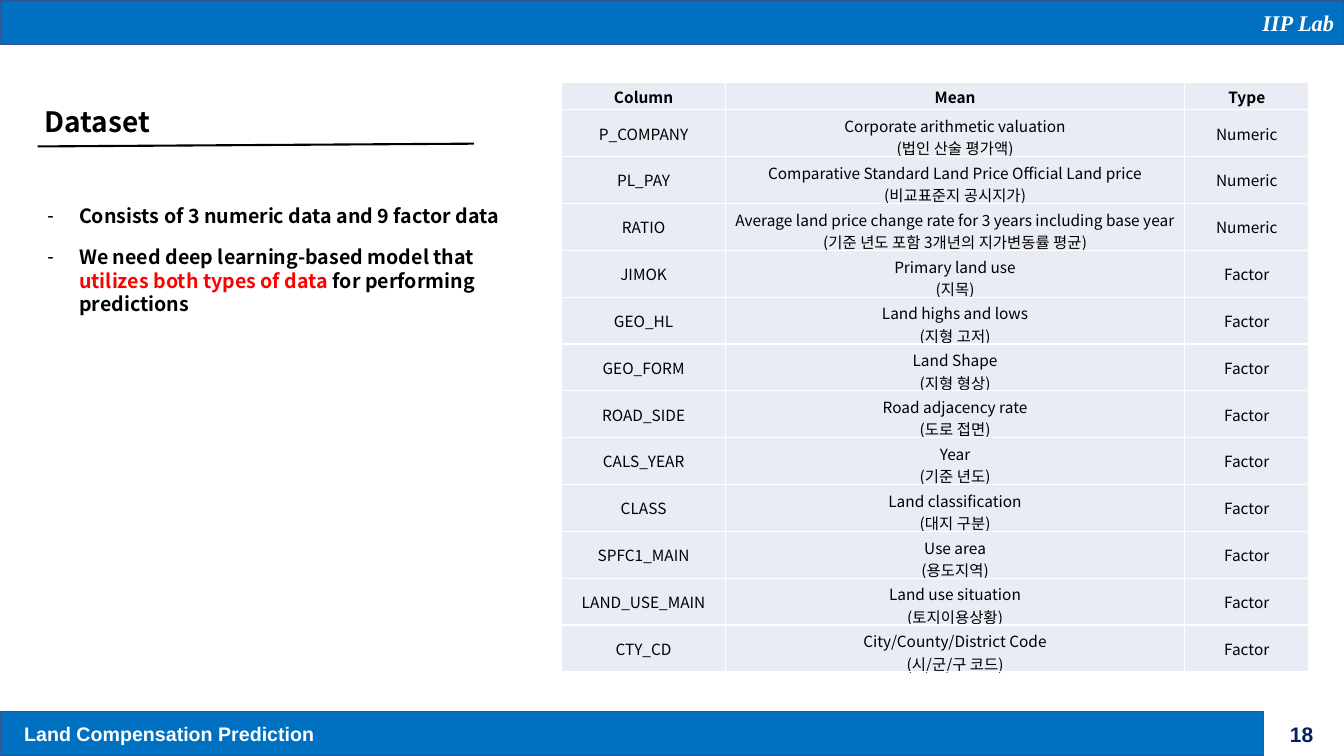
import pptx
import pptx.dml.color
import pptx.enum.shapes
import pptx.enum.text
import pptx.oxml
import pptx.oxml.ns
import pptx.util
from pptx.util import Cm

HUES = {"bar": "0070C0", "edge": "325491", "cell": "E9EBF5", "navy": "002060",
        "red": "FF0000", "black": "000000", "white": "FFFFFF"}
SANS = "Noto Sans CJK KR"
ALIGN = pptx.enum.text.PP_ALIGN
MIDDLE = pptx.enum.text.MSO_ANCHOR.MIDDLE

HEAD = {"name": SANS, "size": 20, "bold": True, "hue": "black"}
POINT = HEAD | {"size": 14}
CELL = HEAD | {"size": 11, "bold": False}
FOOT = {"name": "Arial", "size": 14, "bold": True, "hue": "white"}
PAGE = FOOT | {"size": 15, "hue": "navy"}
LAB = {"name": "Times New Roman", "size": 16, "bold": True, "italic": True,
       "hue": "white"}

ROWS = [
    ("Column", "Mean", "Type"),
    ("P_COMPANY", "Corporate arithmetic valuation\n(법인 산술 평가액)", "Numeric"),
    ("PL_PAY", "Comparative Standard Land Price Official Land price\n"
     "(비교표준지 공시지가)", "Numeric"),
    ("RATIO", "Average land price change rate for 3 years including base year\n"
     "(기준 년도 포함 3개년의 지가변동률 평균)", "Numeric"),
    ("JIMOK", "Primary land use\n(지목)", "Factor"),
    ("GEO_HL", "Land highs and lows\n(지형 고저)", "Factor"),
    ("GEO_FORM", "Land Shape\n(지형 형상)", "Factor"),
    ("ROAD_SIDE", "Road adjacency rate\n(도로 접면)", "Factor"),
    ("CALS_YEAR", "Year\n(기준 년도)", "Factor"),
    ("CLASS", "Land classification\n(대지 구분)", "Factor"),
    ("SPFC1_MAIN", "Use area\n(용도지역)", "Factor"),
    ("LAND_USE_MAIN", "Land use situation\n(토지이용상황)", "Factor"),
    ("CTY_CD", "City/County/District Code\n(시/군/구 코드)", "Factor"),
]
POINTS = [
    [("Consists of 3 numeric data and 9 factor data", "black")],
    [("We need deep learning-based model that ", "black"),
     ("utilizes both types of data", "red"),
     (" for performing predictions", "black")],
]


def rgb(hue):
    return pptx.dml.color.RGBColor.from_string(HUES[hue])


def put(item, **props):
    for key, val in props.items():
        setattr(item, key, val)


def node(tag, **attrs):
    elem = pptx.oxml.parse_xml(f"<{tag} {pptx.oxml.ns.nsdecls('a')}/>")
    for key, val in attrs.items():
        elem.set(key, str(val))
    return elem


def style(run, form):
    """Apply a format dict, giving Korean letters the same font."""
    for key, val in form.items():
        if key == "hue":
            run.font.color.rgb = rgb(val)
        else:
            setattr(run.font, key, pptx.util.Pt(val) if key == "size" else val)
    run.font._element.append(node("a:ea", typeface=form["name"]))


def write(frame, text, form, align):
    frame.text = text
    for para in frame.paragraphs:
        para.alignment = align
        for run in para.runs:
            style(run, form)


def place(shape, box):
    left, top, width, height = map(Cm, box)
    put(shape, left=left, top=top, width=width, height=height)


def add_bar(slide, box):
    bar = slide.shapes.add_shape(
        pptx.enum.shapes.MSO_SHAPE.RECTANGLE, *map(Cm, box))
    bar.shadow.inherit = False
    bar.fill.solid()
    bar.fill.fore_color.rgb = rgb("bar")
    bar.line.color.rgb = rgb("edge")
    bar.line.width = pptx.util.Pt(1)
    return bar


def add_note(slide, box, text, form, align):
    note = slide.shapes.add_textbox(*map(Cm, box))
    note.text_frame.word_wrap = False
    write(note.text_frame, text, form, align)


def add_rule(slide, ends):
    rule = slide.shapes.add_connector(
        pptx.enum.shapes.MSO_CONNECTOR.STRAIGHT, *map(Cm, ends))
    rule.line.color.rgb = rgb("black")
    rule.line.width = pptx.util.Pt(1.5)
    rule._element.spPr.append(node("a:effectLst"))


def fill_title(title, box, text):
    place(title, box)
    put(title.text_frame, vertical_anchor=MIDDLE, word_wrap=True,
        auto_size=pptx.enum.text.MSO_AUTO_SIZE.NONE)
    write(title.text_frame, text, HEAD, ALIGN.LEFT)


def fill_list(body, box, points):
    place(body, box)
    frame = body.text_frame
    put(frame, word_wrap=True, auto_size=pptx.enum.text.MSO_AUTO_SIZE.NONE)
    for i, parts in enumerate(points):
        para = frame.add_paragraph() if i else frame.paragraphs[0]
        put(para, line_spacing=1.0, alignment=ALIGN.LEFT,
            space_before=pptx.util.Pt(13 if i else 0))
        props = para._p.get_or_add_pPr()
        props.set("marL", str(Cm(0.8)))
        props.set("indent", str(-Cm(0.8)))
        props.append(node("a:buChar", char="-"))
        for text, hue in parts:
            run = para.add_run()
            run.text = text
            style(run, POINT | {"hue": hue})


def paint(cell):
    """Give a cell its fill and thin white borders."""
    props = cell._tc.get_or_add_tcPr()
    for side in "LRTB":
        edge = node(f"a:ln{side}", w=pptx.util.Pt(1))
        fill = node("a:solidFill")
        fill.append(node("a:srgbClr", val=HUES["white"]))
        edge.append(fill)
        props.append(edge)
    cell.fill.solid()
    cell.fill.fore_color.rgb = rgb("cell")


def add_grid(slide, box, widths, rows):
    grid = slide.shapes.add_table(len(rows), len(widths), *map(Cm, box)).table
    put(grid, first_row=False, horz_banding=False)
    for col, width in zip(grid.columns, widths):
        col.width = Cm(width)
    for i, texts in enumerate(rows):
        grid.rows[i].height = Cm(1.18 if i else 0.69)
        pad = Cm(0.12 if i else 0.03)
        for cell, text in zip(grid.rows[i].cells, texts):
            put(cell, vertical_anchor=MIDDLE, margin_left=pad,
                margin_right=pad, margin_top=pad, margin_bottom=pad if i else 0)
            write(cell.text_frame, text, CELL | {"bold": i == 0}, ALIGN.CENTER)
            paint(cell)


def main():
    deck = pptx.Presentation()
    put(deck, slide_width=Cm(33.87), slide_height=Cm(19.05))
    slide = deck.slides.add_slide(deck.slide_layouts[1])
    title, body = slide.placeholders

    add_note(slide, (32.2, 18.05, 1.2, 0.9), "18", PAGE, ALIGN.CENTER)
    add_bar(slide, (0, 17.93, 31.85, 1.12))
    add_rule(slide, (0.95, 3.69, 11.94, 3.62))
    fill_title(title, (0.87, 2.49, 21.9, 1.12), "Dataset")
    add_note(slide, (0.36, 18.07, 7.85, 0.86), "Land Compensation Prediction",
             FOOT, ALIGN.LEFT)
    top = add_bar(slide, (0, 0, 33.87, 1.12))
    top.text_frame.vertical_anchor = MIDDLE
    write(top.text_frame, "IIP Lab", LAB, ALIGN.RIGHT)
    add_grid(slide, (14.15, 2.08, 18.85, 14.85), (4.14, 11.56, 3.14), ROWS)
    fill_list(body, (0.94, 5, 12.07, 3.12), POINTS)
    deck.save("out.pptx")


if __name__ == "__main__":
    main()
